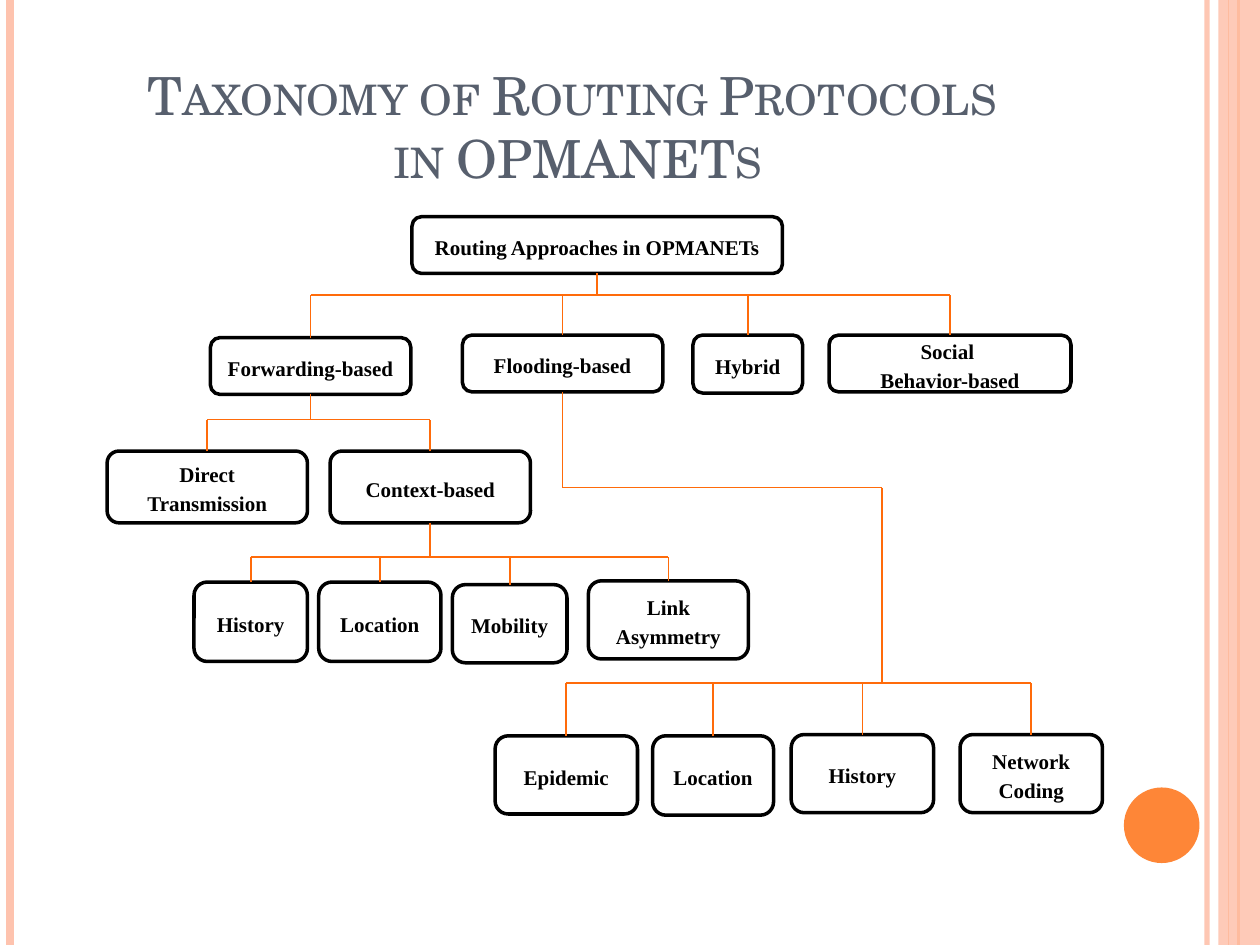
from dataclasses import dataclass
from typing import Optional

from lxml.etree import SubElement
from pptx import Presentation
from pptx.dml.color import RGBColor
from pptx.enum.shapes import MSO_CONNECTOR as Conn, MSO_SHAPE as Shape
from pptx.enum.text import MSO_ANCHOR as Anchor, MSO_AUTO_SIZE as AutoSize, PP_ALIGN as Align
from pptx.oxml.ns import qn
from pptx.util import Inches, Pt

ORANGE, PEACH, BRANCH, BLACK, SLATE = "FE8637", "FEC3AE", "FF6B0A", "000000", "575F6D"
TOP, BOTTOM = 0, 2


@dataclass
class Box:
    text: str
    x: float
    y: float
    w: float
    h: float

    @property
    def cx(self) -> float:
        return self.x + self.w / 2

    @property
    def bottom(self) -> float:
        return self.y + self.h


@dataclass
class Stripe:
    x: float
    width: float
    color: str
    alpha: Optional[int] = None


@dataclass
class Branch:
    parent: str
    children: list[str]
    bus_y: float
    turn: Optional[tuple[float, float]] = None


STRIPES = [
    Stripe(9.58, 3, PEACH, 93),
    Stripe(0.08, 4.5, PEACH),
    Stripe(9.83, 1.5, ORANGE),
    Stripe(9.75, 0.75, ORANGE),
]

BOXES = {
    "root": Box("Routing Approaches in OPMANETs", 3.27, 1.72, 2.94, 0.45),
    "forwarding": Box("Forwarding-based", 1.67, 2.68, 1.59, 0.45),
    "flooding": Box("Flooding-based", 3.67, 2.66, 1.59, 0.45),
    "hybrid": Box("Hybrid", 5.5, 2.66, 0.87, 0.46),
    "social": Box("Social \nBehavior-based", 6.58, 2.66, 1.92, 0.45),
    "direct": Box("Direct Transmission", 0.85, 3.58, 1.59, 0.57),
    "context": Box("Context-based", 2.62, 3.58, 1.59, 0.57),
    "context history": Box("History", 1.54, 4.62, 0.9, 0.63),
    "context location": Box("Location", 2.53, 4.62, 0.97, 0.63),
    "mobility": Box("Mobility", 3.59, 4.64, 0.91, 0.62),
    "link": Box("Link Asymmetry", 4.67, 4.61, 1.27, 0.62),
    "epidemic": Box("Epidemic", 3.93, 5.84, 1.13, 0.62),
    "flooding location": Box("Location", 5.18, 5.84, 0.96, 0.63),
    "flooding history": Box("History", 6.28, 5.83, 1.13, 0.62),
    "coding": Box("Network Coding", 7.62, 5.83, 1.13, 0.62),
}

BRANCHES = [
    Branch("root", ["forwarding", "flooding", "hybrid", "social"], 2.34),
    Branch("forwarding", ["direct", "context"], 3.33),
    Branch("context", ["context history", "context location", "mobility", "link"], 4.42),
    Branch("flooding", ["epidemic", "flooding location", "flooding history", "coding"],
           5.42, turn=(7, 3.87)),
]


def rgb(color: str) -> RGBColor:
    return RGBColor.from_string(color)


def apply(target, formats: dict) -> None:
    for name, value in formats.items():
        setattr(target, name, value)


def set_alpha(fill, percent: int) -> None:
    clr = fill._xPr.find(qn("a:solidFill"))[0]
    SubElement(clr, qn("a:alpha")).set("val", str(percent * 1000))


def add_line(s, x1: float, y1: float, x2: float, y2: float, color: str, width: float):
    line = s.shapes.add_connector(Conn.STRAIGHT, Inches(x1), Inches(y1), Inches(x2), Inches(y2))
    line.line.color.rgb = rgb(color)
    line.line.width = Pt(width)
    SubElement(line._element.spPr, qn("a:effectLst"))
    return line


def add_solid(s, kind, x: float, y: float, w: float, h: float, color: str):
    sp = s.shapes.add_shape(kind, Inches(x), Inches(y), Inches(w), Inches(h))
    sp.shadow.inherit = False
    sp.fill.solid()
    sp.fill.fore_color.rgb = rgb(color)
    sp.line.fill.background()
    return sp


def add_decoration(s) -> None:
    for stripe in STRIPES:
        line = add_line(s, stripe.x, 0, stripe.x, 7.5, stripe.color, stripe.width)
        if stripe.alpha:
            set_alpha(line.line.fill, stripe.alpha)
    band = add_solid(s, Shape.RECTANGLE, 9.67, 0, 0.33, 7.5, PEACH)
    set_alpha(band.fill, 87)
    add_solid(s, Shape.OVAL, 8.92, 6.25, 0.6, 0.6, ORANGE)


def add_title(s) -> None:
    title = s.shapes.title
    apply(title, dict(left=Inches(0.5), top=Inches(0.3), width=Inches(8.17), height=Inches(1.25)))
    tf = title.text_frame
    tf.text = "Taxonomy of Routing Protocols \vin OPMANETs"
    apply(tf, dict(vertical_anchor=Anchor.BOTTOM, auto_size=AutoSize.NONE, word_wrap=True))
    p = tf.paragraphs[0]
    p.alignment = Align.CENTER
    for r in p.runs:
        apply(r.font, dict(name="TeX Gyre Schola", size=Pt(30)))
        r.font.color.rgb = rgb(SLATE)
        r.font._element.set("cap", "small")


def add_box(s, box: Box):
    sp = s.shapes.add_shape(Shape.ROUNDED_RECTANGLE, Inches(box.x), Inches(box.y),
                            Inches(box.w), Inches(box.h))
    sp.shadow.inherit = False
    sp.fill.background()
    sp.line.color.rgb = rgb(BLACK)
    sp.line.width = Pt(2)
    tf = sp.text_frame
    tf.text = box.text
    apply(tf, dict(vertical_anchor=Anchor.MIDDLE, word_wrap=True))
    for p in tf.paragraphs:
        apply(p, dict(alignment=Align.CENTER, line_spacing=1.15))
        for r in p.runs:
            apply(r.font, dict(name="Times New Roman", size=Pt(12), bold=True))
            r.font.color.rgb = rgb(BLACK)
    return sp


def add_branch(s, branch: Branch, shapes: dict) -> None:
    parent = BOXES[branch.parent]
    children = [BOXES[name] for name in branch.children]
    turn_x, stem_end = branch.turn or (parent.cx, branch.bus_y)
    stem = add_line(s, parent.cx, parent.bottom, parent.cx, stem_end, BRANCH, 1)
    stem.begin_connect(shapes[branch.parent], BOTTOM)
    if branch.turn:
        add_line(s, parent.cx, stem_end, turn_x, stem_end, BRANCH, 1)
        add_line(s, turn_x, stem_end, turn_x, branch.bus_y, BRANCH, 1)
    add_line(s, children[0].cx, branch.bus_y, children[-1].cx, branch.bus_y, BRANCH, 1)
    for name, child in zip(branch.children, children):
        drop = add_line(s, child.cx, child.y, child.cx, branch.bus_y, BRANCH, 1)
        drop.begin_connect(shapes[name], TOP)


def main() -> None:
    prs = Presentation()
    apply(prs, dict(slide_width=Inches(10), slide_height=Inches(7.5)))
    s = prs.slides.add_slide(prs.slide_layouts[5])
    add_decoration(s)
    add_title(s)
    shapes = {name: add_box(s, box) for name, box in BOXES.items()}
    for branch in BRANCHES:
        add_branch(s, branch, shapes)
    prs.save("out.pptx")


if __name__ == "__main__":
    main()
